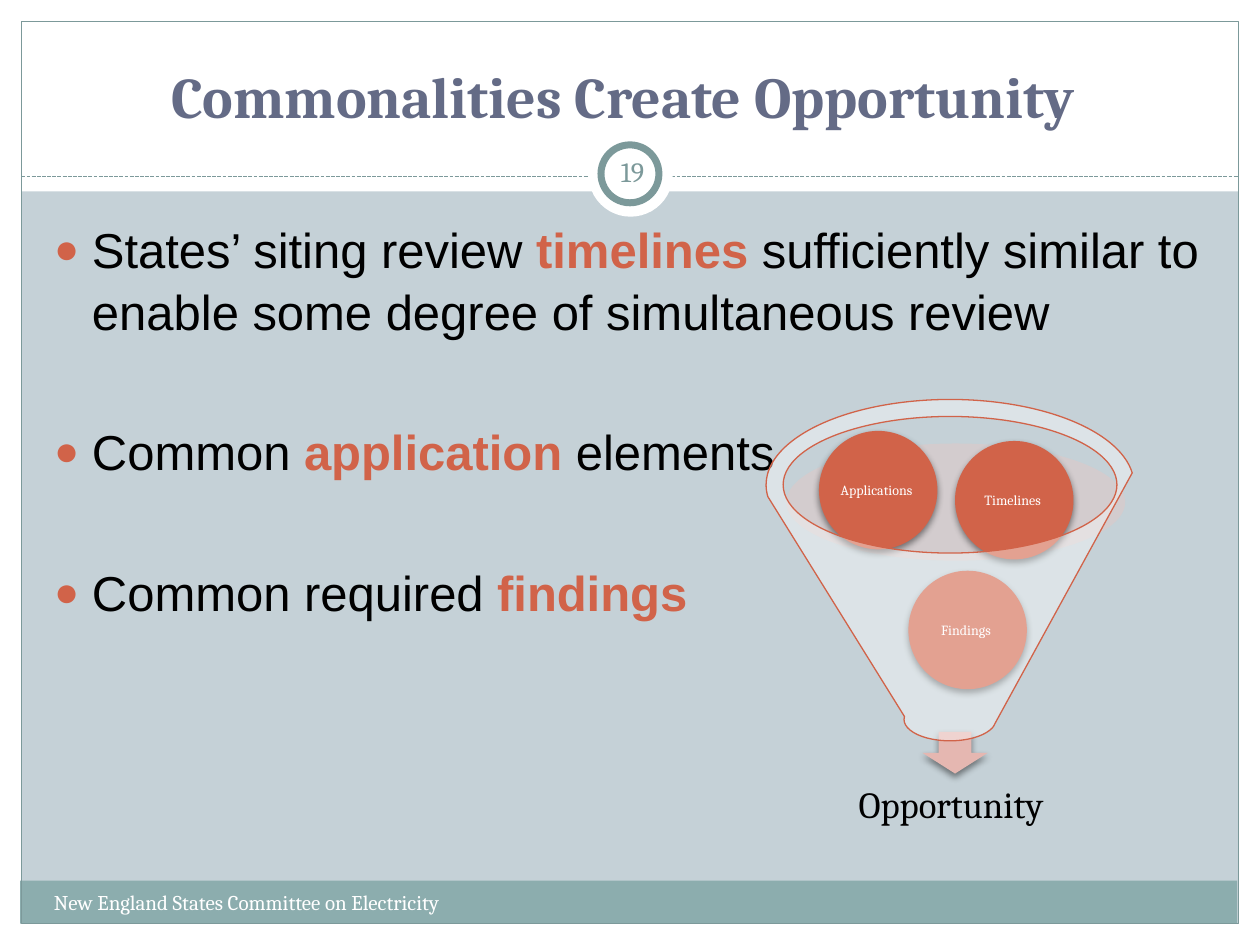
from typing import NamedTuple, Optional

from lxml.etree import SubElement
from pptx import Presentation
from pptx.dml.color import RGBColor as Rgb
from pptx.enum.dml import MSO_LINE as Dash
from pptx.enum.shapes import MSO_CONNECTOR as Link, MSO_SHAPE as Kind
from pptx.enum.text import MSO_ANCHOR as Anchor, MSO_AUTO_SIZE as Auto, PP_ALIGN as Align
from pptx.oxml.ns import qn
from pptx.util import Pt

PX = 9144  # 100 px to the inch
WHITE = Rgb(0xFF, 0xFF, 0xFF)
BLACK = Rgb(0x00, 0x00, 0x00)
MIST = Rgb(0xC5, 0xD1, 0xD7)
SAGE = Rgb(0x8C, 0xAD, 0xAE)
TEAL = Rgb(0x7C, 0x99, 0x9A)
SLATE = Rgb(0x64, 0x6B, 0x86)
RUST = Rgb(0xD1, 0x63, 0x49)
ROSE = Rgb(0xE9, 0xC6, 0xC1)
PINK = Rgb(0xE5, 0xB7, 0xB1)


class Box(NamedTuple):
    x: int
    y: int
    w: int
    h: int

    def emu(self) -> list[int]:
        return [v * PX for v in self]


class Part(NamedTuple):
    kind: Kind
    box: Box
    fill: Optional[Rgb] = None
    line: Optional[Rgb] = None
    width: float = 0.75
    alpha: int = 100
    shade: bool = False


class Font(NamedTuple):
    size: int
    color: Rgb
    face: str = "Cambria"
    bold: bool = False


class Ball(NamedTuple):
    x: int
    y: int
    text: str


class Point(NamedTuple):
    start: str
    key: str
    end: str = ""


FRAME = [
    Part(Kind.RECTANGLE, Box(0, 733, 1000, 17), WHITE),
    Part(Kind.RECTANGLE, Box(0, 0, 1000, 152), WHITE),
    Part(Kind.RECTANGLE, Box(0, 0, 17, 750), WHITE),
    Part(Kind.RECTANGLE, Box(983, 0, 17, 750), WHITE),
    Part(Kind.RECTANGLE, Box(16, 699, 966, 34), SAGE),
    Part(Kind.RECTANGLE, Box(17, 17, 966, 716), line=TEAL),
]
BADGE = [
    Part(Kind.OVAL, Box(467, 105, 67, 67), WHITE),
    Part(Kind.OVAL, Box(477, 115, 46, 46), WHITE, TEAL, 4),
]
POOL = Part(Kind.OVAL, Box(624, 352, 269, 93), ROSE, alpha=40)
ARROW = Part(Kind.DOWN_ARROW, Box(732, 581, 52, 33), PINK, shade=True)
FUNNEL = Part(Kind.FUNNEL, Box(608, 317, 292, 271), WHITE, RUST, alpha=40)
BALLS = [
    Ball(721, 453, "Findings "),
    Ball(650, 342, "Applications "),
    Ball(758, 350, "Timelines "),
]
POINTS = [
    Point("States’ siting review ", "timelines",
          " sufficiently similar to enable some degree of simultaneous review"),
    Point("Common ", "application ", "elements"),
    Point("Common required ", "findings"),
]


def draw(shapes, part: Part):
    shape = shapes.add_shape(part.kind, *part.box.emu())
    shape.shadow.inherit = False
    if part.fill is None:
        shape.fill.background()
    else:
        shape.fill.solid()
        shape.fill.fore_color.rgb = part.fill
    if part.line is None:
        shape.line.fill.background()
    else:
        shape.line.color.rgb = part.line
        shape.line.width = Pt(part.width)
    props = shape._element.spPr
    if part.alpha < 100:
        tint = props.find(qn("a:solidFill"))[0]
        SubElement(tint, qn("a:alpha"), val=str(part.alpha * 1000))
    if part.shade:
        glow = SubElement(props.find(qn("a:effectLst")), qn("a:outerShdw"),
                          blurRad=str(Pt(4)), dist=str(Pt(2)),
                          dir="5400000", rotWithShape="0")
        SubElement(SubElement(glow, qn("a:srgbClr"), val="000000"),
                   qn("a:alpha"), val="45000")
    return shape


def add_run(para, text: str, font: Font) -> None:
    run = para.add_run()
    run.text = text
    run.font.name = font.face
    run.font.size = Pt(font.size)
    run.font.bold = font.bold
    run.font.color.rgb = font.color


def set_frame(shape, pad: int, anchor: Anchor):
    frame = shape.text_frame
    frame.word_wrap = True
    frame.auto_size = Auto.NONE
    frame.vertical_anchor = anchor
    frame.margin_left = frame.margin_right = pad * PX
    frame.margin_top = frame.margin_bottom = pad * PX
    return frame


def write(shape, text: str, font: Font, pad: int = 5,
          align: Align = Align.CENTER, anchor: Anchor = Anchor.MIDDLE) -> None:
    para = set_frame(shape, pad, anchor).paragraphs[0]
    para.alignment = align
    add_run(para, text, font)


def place(shape, box: Box) -> None:
    """Move a placeholder to its box and in front of what is drawn so far."""
    shape.left, shape.top, shape.width, shape.height = box.emu()
    node = shape._element
    node.getparent().append(node)


def add_rule(shapes) -> None:
    rule = shapes.add_connector(Link.STRAIGHT, 17 * PX, 140 * PX, 983 * PX, 140 * PX)
    rule.line.color.rgb = TEAL
    rule.line.width = Pt(0.75)
    rule.line.dash_style = Dash.SQUARE_DOT
    SubElement(rule._element.spPr, qn("a:effectLst"))


def set_dot(para) -> None:
    props = para._p.get_or_add_pPr()
    props.set("marL", str(30 * PX))
    props.set("indent", str(-30 * PX))
    SubElement(SubElement(props, qn("a:buClr")), qn("a:srgbClr"), val=str(RUST))
    SubElement(props, qn("a:buSzPct"), val="85000")
    SubElement(props, qn("a:buFont"), typeface="Arial")
    SubElement(props, qn("a:buChar"), char="●")


def fill_list(body) -> None:
    plain = Font(28, BLACK, "Arial")
    strong = Font(28, RUST, "Arial", True)
    frame = set_frame(body, 5, Anchor.TOP)
    frame.margin_left = frame.margin_right = 10 * PX
    for i, point in enumerate(POINTS):
        para = frame.add_paragraph() if i else frame.paragraphs[0]
        para.line_spacing = 1.05
        para.space_before = Pt(45 if i else 0)
        set_dot(para)
        for text, font in zip(point, (plain, strong, plain)):
            if text:
                add_run(para, text, font)


def main() -> None:
    deck = Presentation()
    deck.slide_width, deck.slide_height = 1000 * PX, 750 * PX
    slide = deck.slides.add_slide(deck.slide_layouts[1])
    slide.background.fill.solid()
    slide.background.fill.fore_color.rgb = MIST
    shapes = slide.shapes
    title, body = shapes.title, slide.placeholders[1]

    for part in FRAME:
        draw(shapes, part)
    add_rule(shapes)
    for part in BADGE:
        draw(shapes, part)

    place(title, Box(33, 25, 933, 83))
    write(title, "Commonalities Create Opportunity ",
          Font(33, SLATE, bold=True), anchor=Anchor.BOTTOM)
    place(body, Box(33, 167, 930, 500))
    fill_list(body)

    draw(shapes, POOL)
    draw(shapes, ARROW)
    label = shapes.add_textbox(*Box(633, 607, 250, 62).emu())
    write(label, "Opportunity ", Font(21, BLACK), 16)
    for ball in BALLS:
        disc = draw(shapes, Part(Kind.OVAL, Box(ball.x, ball.y, 94, 94), RUST, shade=True))
        write(disc, ball.text, Font(8, WHITE), 1)
    draw(shapes, FUNNEL)

    number = shapes.add_textbox(*Box(477, 112, 50, 48).emu())
    write(number, "19", Font(16, TEAL))
    footer = shapes.add_textbox(*Box(33, 701, 392, 40).emu())
    write(footer, "New England States Committee on Electricity",
          Font(12, WHITE), 5, Align.LEFT, Anchor.TOP)
    footer.text_frame.margin_left = 10 * PX
    deck.save("out.pptx")


if __name__ == "__main__":
    main()
